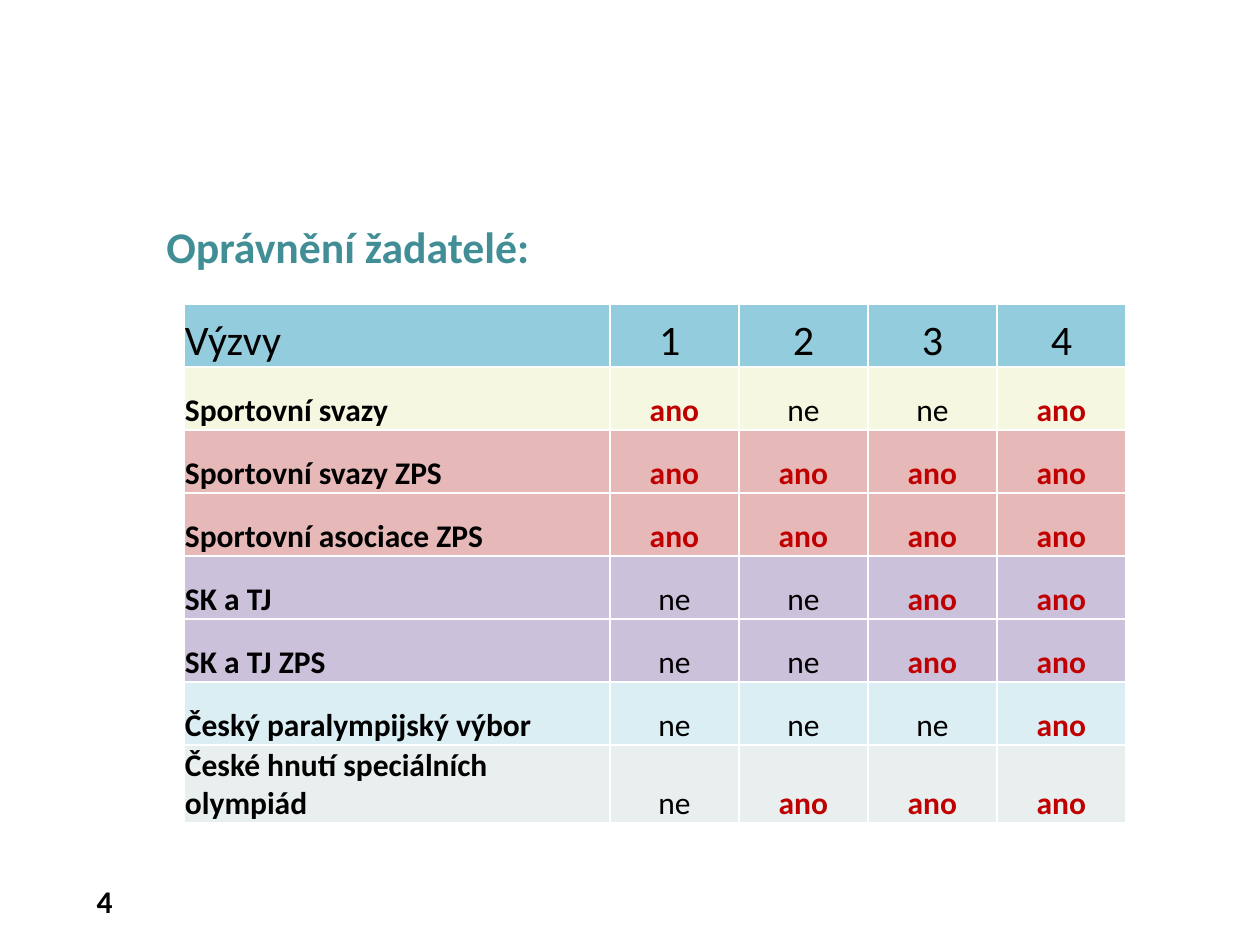
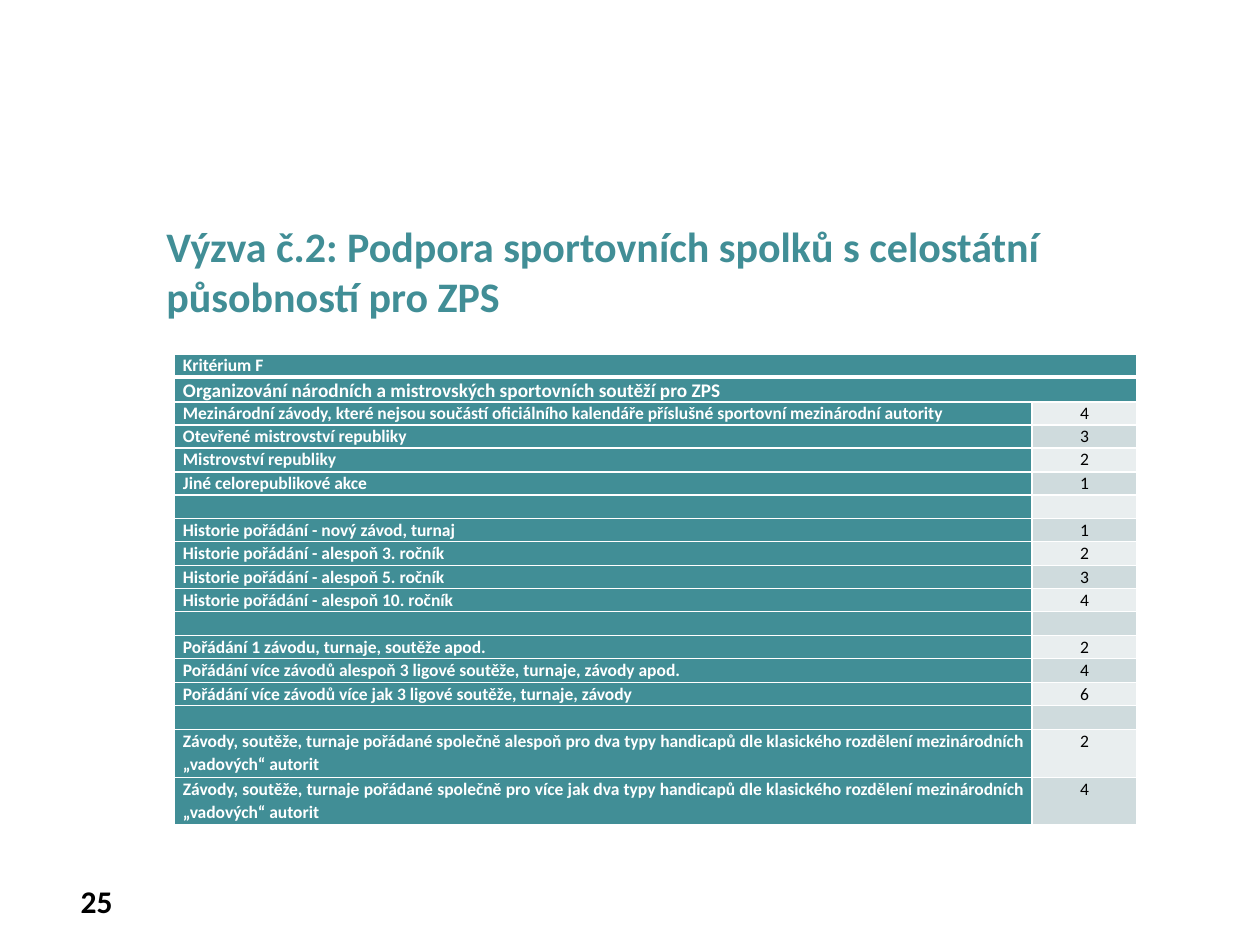
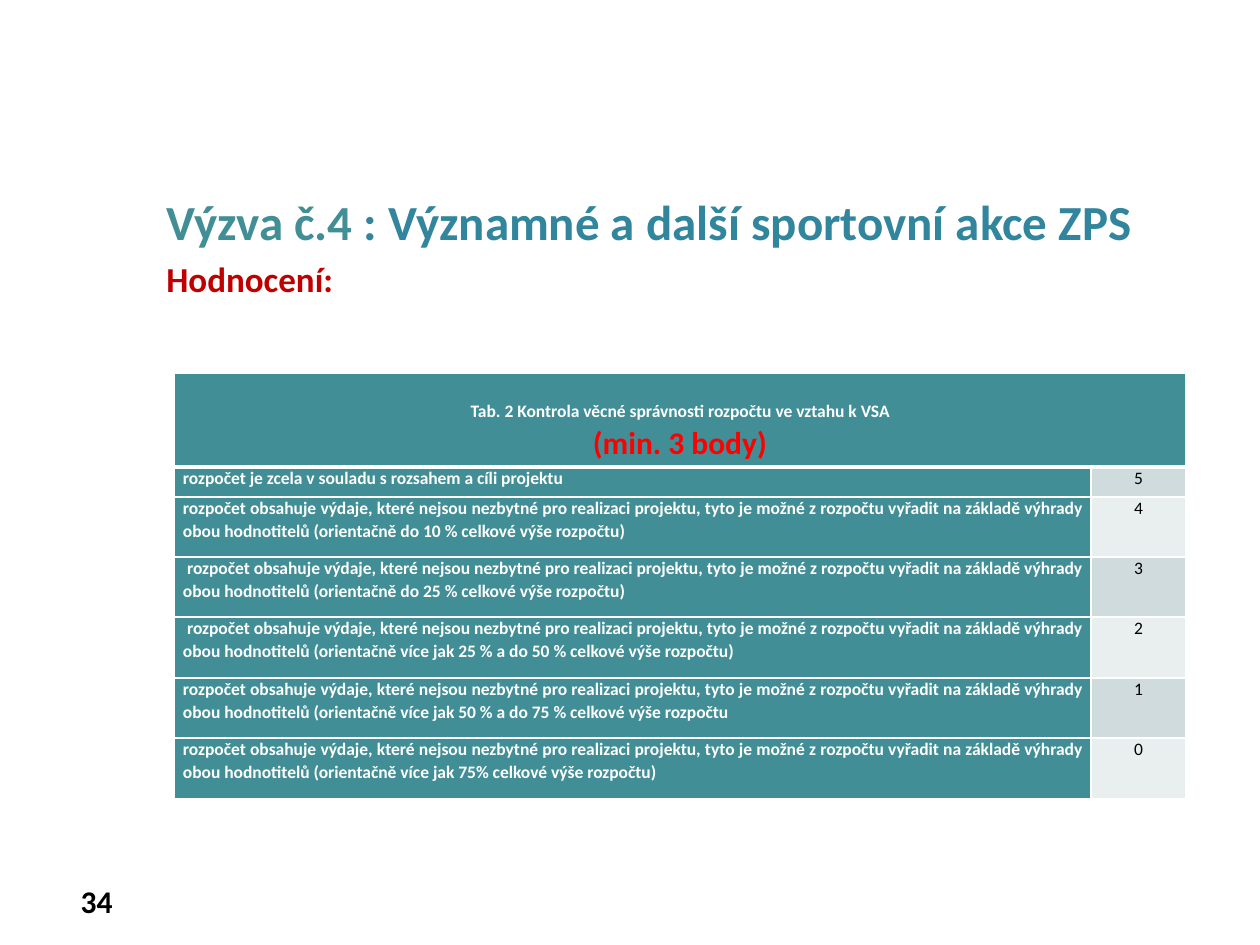
from lxml import etree
from pptx import Presentation
from pptx.dml.color import RGBColor
from pptx.enum.text import MSO_ANCHOR, PP_ALIGN
from pptx.oxml.ns import qn
from pptx.util import Emu, Pt

LEFT, CENTER, RIGHT, JUSTIFY = PP_ALIGN.LEFT, PP_ALIGN.CENTER, PP_ALIGN.RIGHT, PP_ALIGN.JUSTIFY
TOP, MIDDLE, BOTTOM = MSO_ANCHOR.TOP, MSO_ANCHOR.MIDDLE, MSO_ANCHOR.BOTTOM

PX_PER_INCH = 126
EMU_PER_INCH = 914400
FONT = "Calibri"
COLORS = {
    "teal": "418E96",
    "blue": "31859C",
    "white": "FFFFFF",
    "black": "000000",
    "dark_red": "C00000",
    "red": "FF0000",
    "sky": "93CDDD",
    "cream": "F6F7E1",
    "rose": "E6B9B8",
    "lilac": "CCC1DA",
    "ice": "DBEEF4",
    "pale": "E9EEEF",
    "gray": "CFDBDD",
}

APPLICANTS = [
    ("Sportovní svazy", "cream", "ano ne ne ano"),
    ("Sportovní svazy ZPS", "rose", "ano ano ano ano"),
    ("Sportovní asociace ZPS", "rose", "ano ano ano ano"),
    ("SK a TJ", "lilac", "ne ne ano ano"),
    ("SK a TJ ZPS", "lilac", "ne ne ano ano"),
    ("Český paralympijský výbor", "ice", "ne ne ne ano"),
    ("České hnutí speciálních olympiád", "pale", "ne ano ano ano"),
]

HANDICAPS = "dva typy handicapů dle klasického rozdělení mezinárodních „vadových“ autorit"
EVENT_SCORES = [
    ("Mezinárodní závody, které nejsou součástí oficiálního kalendáře "
     "příslušné sportovní mezinárodní autority", "4"),
    ("Otevřené mistrovství republiky", "3"),
    ("Mistrovství republiky", "2"),
    ("Jiné celorepublikové akce", "1"),
    ("", ""),
    ("Historie pořádání - nový závod, turnaj", "1"),
    ("Historie pořádání - alespoň 3. ročník", "2"),
    ("Historie pořádání - alespoň 5. ročník", "3"),
    ("Historie pořádání - alespoň 10. ročník", "4"),
    ("", ""),
    ("Pořádání 1 závodu, turnaje, soutěže apod.", "2"),
    ("Pořádání více závodů alespoň 3 ligové soutěže, turnaje, závody apod.", "4"),
    ("Pořádání více závodů více jak 3 ligové soutěže, turnaje, závody", "6"),
    ("", ""),
    (f"Závody, soutěže, turnaje pořádané společně alespoň pro {HANDICAPS}", "2"),
    (f"Závody, soutěže, turnaje pořádané společně pro více jak {HANDICAPS}", "4"),
]

EXCESS = ("rozpočet obsahuje výdaje, které nejsou nezbytné pro realizaci projektu, tyto je možné "
          "z rozpočtu vyřadit na základě výhrady obou hodnotitelů (orientačně")
BUDGET_SCORES = [
    ("rozpočet je zcela v souladu s rozsahem a cíli projektu", "5"),
    (f"{EXCESS} do 10 % celkové výše rozpočtu)", "4"),
    (f" {EXCESS} do 25 % celkové výše rozpočtu)", "3"),
    (f" {EXCESS} více jak 25 % a do 50 % celkové výše rozpočtu)", "2"),
    (f"{EXCESS} více jak 50 % a do 75 % celkové výše rozpočtu", "1"),
    (f"{EXCESS} více jak 75% celkové výše rozpočtu)", "0"),
]


def px(length):
    return Emu(round(length * EMU_PER_INCH / PX_PER_INCH))


def split(total, count):
    return [total * (i + 1) // count - total * i // count for i in range(count)]


def color(name):
    return RGBColor.from_string(COLORS[name])


class Deck:
    def __init__(self, width, height):
        self.file = Presentation()
        self.file.slide_width, self.file.slide_height = px(width), px(height)
        self.page = None

    def add_page(self, number):
        self.page = self.file.slides.add_slide(self.file.slide_layouts[6])
        self.text(35, 876, 90, 50, [[(number, 18, "black", True)]], RIGHT)

    def fill_frame(self, frame, paras, align, line_spacing=None):
        for index, spans in enumerate(paras):
            para = frame.add_paragraph() if index else frame.paragraphs[0]
            para.alignment = align
            if line_spacing:
                para.line_spacing = line_spacing
            elif index:
                para.space_before = Pt(spans[0][1] * 0.2)
            for words, size, shade, bold in spans:
                if not words:
                    para._p.get_or_add_endParaRPr().set("sz", str(size * 100))
                    continue
                span = para.add_run()
                span.text = words
                span.font.name = FONT
                span.font.size = Pt(size)
                span.font.bold = bold
                span.font.color.rgb = color(shade)

    def text(self, left, top, width, height, paras, align=LEFT):
        box = self.page.shapes.add_textbox(px(left), px(top), px(width), px(height))
        box.text_frame.word_wrap = True
        self.fill_frame(box.text_frame, paras, align)

    def table(self, left, top, widths, heights):
        frame = self.page.shapes.add_table(
            len(heights), len(widths), px(left), px(top), px(sum(widths)), px(sum(heights)))
        table = frame.table
        table.first_row = table.horz_banding = False
        for column, width in zip(table.columns, widths):
            column.width = px(width)
        for row, height in zip(table.rows, heights):
            row.height = px(height)
        return table

    def cell(self, cell, paras, fill, align, anchor=TOP, margins=(9, 0, 9, 0),
             line_spacing=None, top_line=1, bottom_line=1):
        cell.margin_left, cell.margin_top, cell.margin_right, cell.margin_bottom = map(px, margins)
        cell.vertical_anchor = anchor
        cell.fill.solid()
        cell.fill.fore_color.rgb = color(fill)
        self.fill_frame(cell.text_frame, paras, align, line_spacing)
        properties = cell._tc.get_or_add_tcPr()
        sides = (("L", 1), ("R", 1), ("T", top_line), ("B", bottom_line))
        for index, (side, points) in enumerate(sides):
            line = etree.Element(qn(f"a:ln{side}"), w=str(Pt(points)))
            solid = etree.SubElement(line, qn("a:solidFill"))
            etree.SubElement(solid, qn("a:srgbClr"), val=COLORS["white"])
            properties.insert(index, line)

    def applicant_table(self, left, top, widths, heights):
        table = self.table(left, top, widths, heights)
        rows = [[(label, "sky", 24, "black", False) for label in ("Výzvy", "1 ", "2", "3", "4")]]
        for name, fill, answers in APPLICANTS:
            row = [(name, fill, 18, "black", True)]
            for answer in answers.split():
                yes = answer == "ano"
                row.append((answer, fill, 18, "dark_red" if yes else "black", yes))
            rows.append(row)
        for r, row in enumerate(rows):
            for c, (words, fill, size, shade, bold) in enumerate(row):
                self.cell(table.cell(r, c), [[(words, size, shade, bold)]], fill,
                          CENTER if c else LEFT, BOTTOM, (1, 1, 1, 0))

    def score_table(self, left, top, widths, heights, headings, scores,
                    heading_align=JUSTIFY, heading_anchor=TOP, heading_inset=0):
        table = self.table(left, top, widths, heights)
        for r, paras in enumerate(headings):
            table.cell(r, 0).merge(table.cell(r, 1))
            for c in (0, 1):
                self.cell(table.cell(r, c), [] if c else paras, "teal", heading_align,
                          heading_anchor, (9, heading_inset, 9, 0), 1.07,
                          top_line=3 if r == 1 else 1, bottom_line=1 if r else 3)
        for r, (label, score) in enumerate(scores, len(headings)):
            top_line = 3 if r == 1 else 1
            self.cell(table.cell(r, 0), [[(label, 10, "white", True)]], "teal", JUSTIFY,
                      line_spacing=1.07, top_line=top_line)
            self.cell(table.cell(r, 1), [[(score, 10, "black", False)]],
                      "gray" if r % 2 else "pale", CENTER,
                      line_spacing=1.07, top_line=top_line)


def main():
    deck = Deck(1260, 945)

    deck.add_page("4")
    deck.text(154, 214, 1043, 694, [[("Oprávnění žadatelé:", 25, "teal", True)]])
    deck.applicant_table(184, 304, [426] + [129] * 4, [63] * 7 + [78])

    deck.add_page("25")
    deck.text(154, 214, 1022, 665, [
        [("Výzva č.2: Podpora sportovních spolků s celostátní působností pro ZPS",
          24, "teal", True)]])
    deck.score_table(
        174, 354, [858, 105], [23, 25, *split(328, 14), 48, 47],
        [[[("Kritérium F", 10, "white", True)]],
         [[("Organizování národních a mistrovských sportovních soutěží pro ZPS",
            11, "white", True)]]],
        EVENT_SCORES)

    deck.add_page("34")
    deck.text(154, 185, 1043, 725, [
        [("Výzva č.4 ", 28, "teal", True),
         (": Významné a další sportovní akce ZPS", 28, "blue", True)],
        [("Hodnocení:", 20, "dark_red", True)]])
    deck.score_table(
        174, 373, [917, 95], [94, 30, *split(302, 5)],
        [[[("Tab. 2 Kontrola věcné správnosti rozpočtu ve vztahu k VSA", 10, "white", True)],
          [("(min. 3 body)", 18, "red", True)]]],
        BUDGET_SCORES, CENTER, MIDDLE, 23)

    deck.file.save("out.pptx")


if __name__ == "__main__":
    main()
